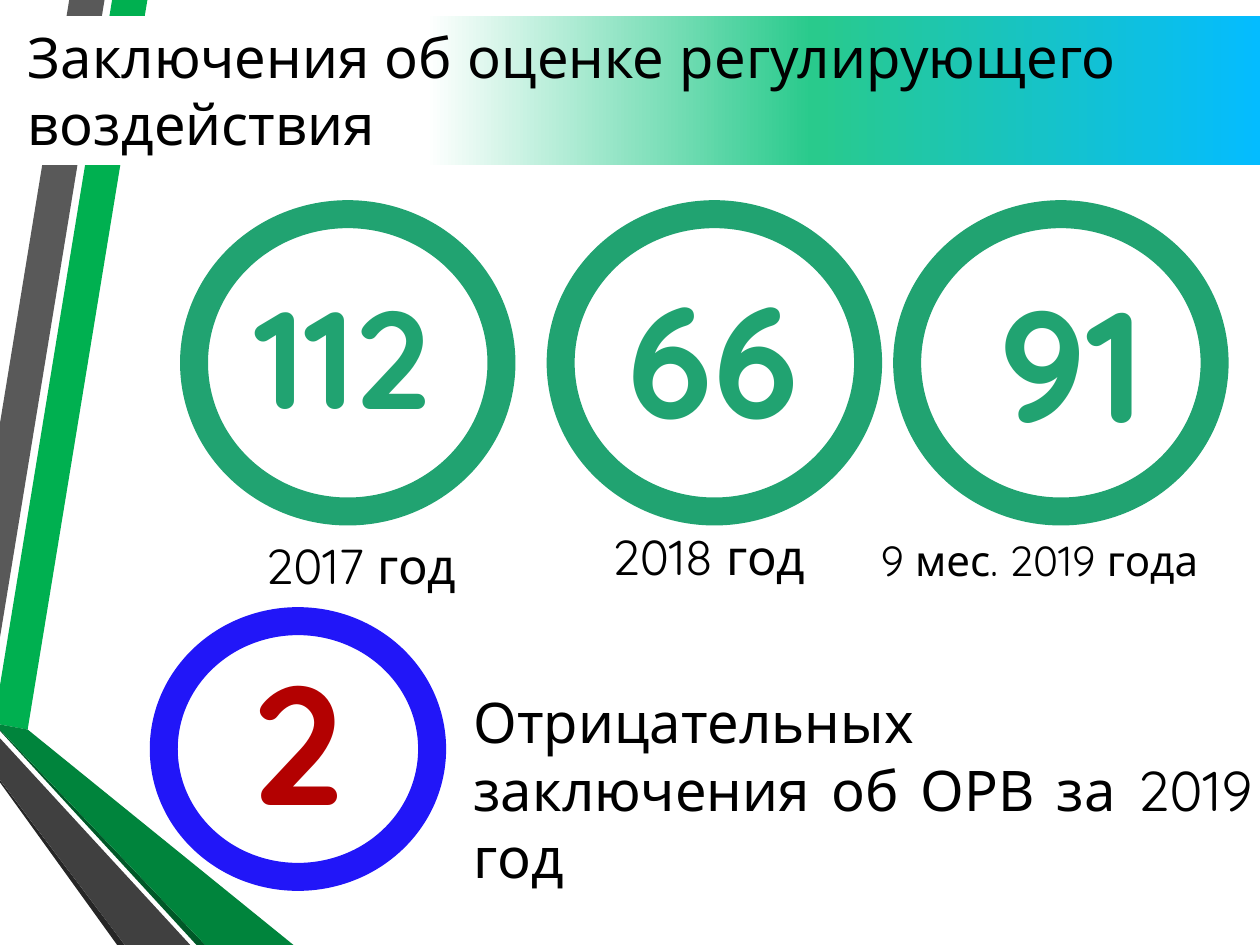
import pptx
import pptx.dml.color
import pptx.enum.shapes
import pptx.enum.text
import pptx.oxml
import pptx.oxml.ns
import pptx.util

FONT = "Quicksand"
BLACK, GREEN, BLUE, RED = "000000", "21A371", "2116F8", "B30101"
ALIGN = pptx.enum.text.PP_ALIGN

deck = pptx.Presentation()
deck.slide_width = pptx.util.Inches(10)
deck.slide_height = pptx.util.Inches(7.5)
CELL = deck.slide_width // 100  # square grid of 100 columns by 75 rows
slide = deck.slides.add_slide(deck.slide_layouts[5])


def paint(color_format, hex_color):
    color_format.rgb = pptx.dml.color.RGBColor.from_string(hex_color)


def write(box, text, size, color, align, bold=False):
    """Fill a text frame with one formatted paragraph."""
    frame = box.text_frame
    frame.text = text
    frame.word_wrap = True
    frame.auto_size = pptx.enum.text.MSO_AUTO_SIZE.SHAPE_TO_FIT_TEXT
    frame.vertical_anchor = pptx.enum.text.MSO_ANCHOR.TOP
    paragraph = frame.paragraphs[0]
    paragraph.alignment = align
    font = paragraph.runs[0].font
    font.name, font.size, font.bold = FONT, pptx.util.Pt(size), bold
    paint(font.color, color)


# Ribbons along the left edge, corner points in tenths of a grid cell
ribbons = [
    ("00B050", [(0, 544), (0, 575), (22, 579), (117, 0), (89, 0)]),
    ("595959", [(83, 0), (55, 0), (0, 336), (0, 506)]),
    ("262626", [(0, 619), (0, 621), (93, 750), (99, 750)]),
    ("005828", [(0, 579), (0, 580), (156, 750), (163, 750)]),
    ("00843C", [(0, 579), (163, 750), (233, 750), (22, 579), (0, 575)]),
    ("404040", [(0, 619), (99, 750), (151, 750), (0, 586)]),
]
for color, corners in ribbons:
    builder = slide.shapes.build_freeform(*corners[0], scale=CELL / 10)
    builder.add_line_segments(corners[1:], close=True)
    ribbon = builder.convert_to_shape()
    ribbon.shadow.inherit = False
    ribbon.fill.solid()
    paint(ribbon.fill.fore_color, color)
    ribbon.line.fill.background()

# Heading banner, placed above the ribbons
heading = slide.shapes.title
heading.element.getparent().append(heading.element)
heading.left, heading.top, heading.width, heading.height = (
    int(n * CELL) for n in (1.2, 1.3, 98.8, 11.8))
write(heading, "Заключения об оценке регулирующего воздействия", 32, BLACK, ALIGN.LEFT)
heading.fill.gradient()
heading.fill.gradient_angle = 0
stops = heading.element.spPr.find(".//" + pptx.oxml.ns.qn("a:gsLst"))
for stop in list(stops):
    stops.remove(stop)
for percent, color in [(33, "FFFFFF"), (64, "29CA8C"), (100, "04BCFF")]:
    stops.append(pptx.oxml.parse_xml(
        f'<a:gs {pptx.oxml.ns.nsdecls("a")} pos="{percent * 1000}">'
        f'<a:srgbClr val="{color}"/></a:gs>'))

# Rings: left, top, width, height in grid cells
rings = [(left, 17, 24.4, 23.6, GREEN) for left in (15.4, 44.5, 72)]
rings.append((13, 49.3, 21.3, 20.3, BLUE))
for *cells, color in rings:
    ring = slide.shapes.add_shape(
        pptx.enum.shapes.MSO_SHAPE.OVAL, *(int(n * CELL) for n in cells))
    ring.shadow.inherit = False
    ring.fill.background()
    ring.line.width = pptx.util.Pt(16)
    paint(ring.line.color, color)

# Counts inside the rings and captions beside them
labels = [
    ((16.9, 21, 20.5, 14.3), "112", 79, GREEN, ALIGN.CENTER, True),
    ((48.4, 20.2, 16.5, 16.2), "66", 90, GREEN, ALIGN.CENTER, True),
    ((76.8, 20.6, 16.5, 16.2), "91", 90, GREEN, ALIGN.CENTER, True),
    ((15.4, 50.1, 16.5, 17.2), "2", 96, RED, ALIGN.CENTER, True),
    ((20.1, 42, 21.3, 5.7), "2017 год", 28, BLACK, ALIGN.JUSTIFY, False),
    ((47.6, 41.3, 21.3, 5.7), "2018 год", 28, BLACK, ALIGN.JUSTIFY, False),
    ((68.9, 41.9, 30.7, 5), "9 мес. 2019 года", 24, BLACK, ALIGN.JUSTIFY, False),
    ((36.6, 54.1, 63.8, 11.8), "Отрицательных заключения об ОРВ за 2019 год",
     32, BLACK, ALIGN.JUSTIFY, False),
]
for cells, *content in labels:
    label = slide.shapes.add_textbox(*(int(n * CELL) for n in cells))
    write(label, *content)

deck.save("out.pptx")
